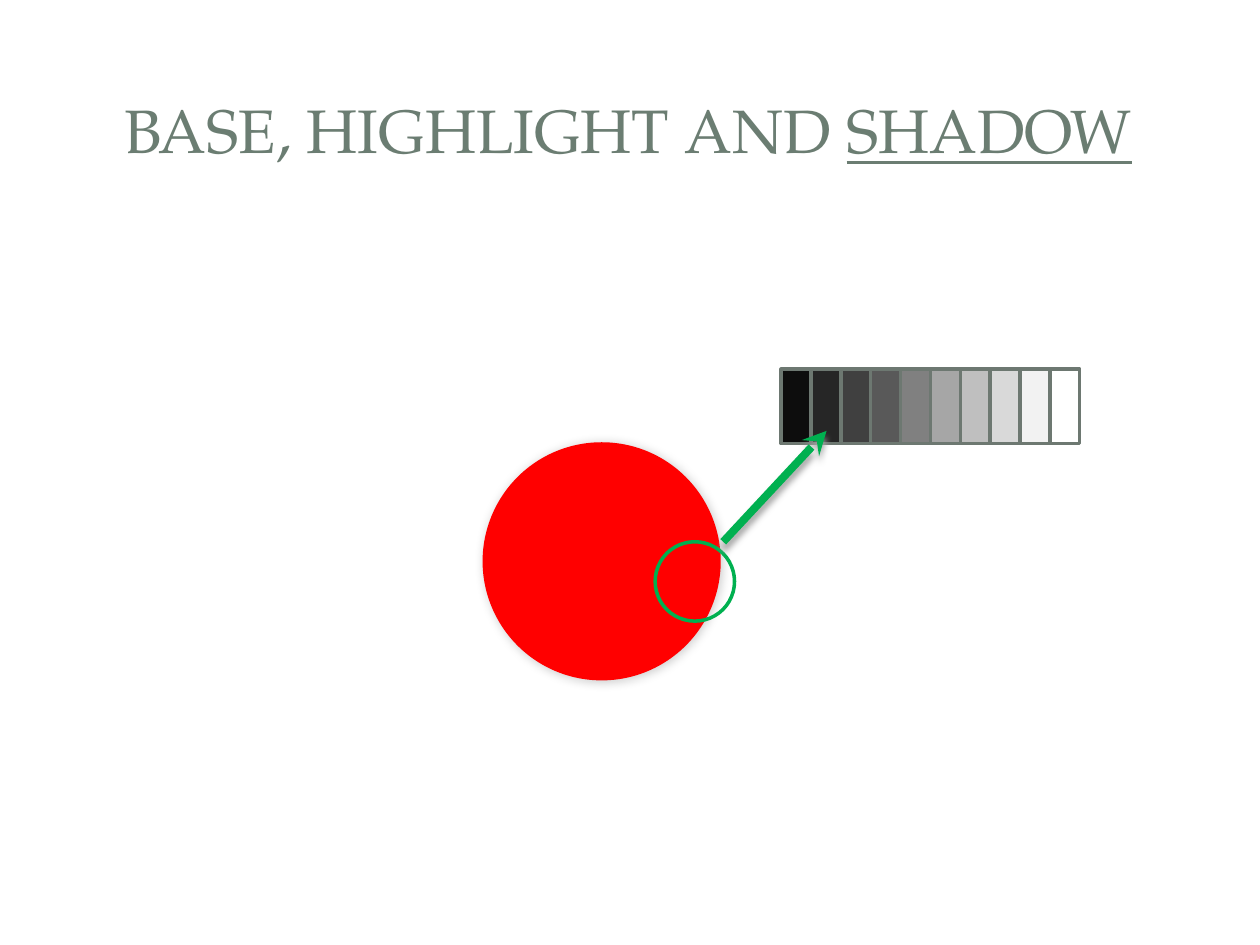
import pptx
import pptx.util
import pptx.dml.color
import pptx.enum.shapes
import pptx.enum.text
import pptx.oxml
import pptx.oxml.ns
from pptx.util import Inches

COLORS = {"title": "6B7D72", "ball": "FF0000", "marker": "00B050",
          "swatch_line": "6D7871", "soft_shadow": "000000", "arrow_shadow": "A6A6A6"}
FONT = "TeX Gyre Pagella"
TITLE = [("BASE, HIGHLIGHT AND ", False), ("SHADOW", True)]
GRAYS = ["0D0D0D", "262626", "404040", "595959", "808080",
         "A6A6A6", "BFBFBF", "D9D9D9", "F2F2F2", "FFFFFF"]
SCALE_LEFT, SCALE_TOP, SCALE_WIDTH, SCALE_HEIGHT = 6.2, 2.93, 2.37, 0.59
SHAPES = pptx.enum.shapes.MSO_SHAPE


def rgb(value):
    return pptx.dml.color.RGBColor.from_string(value)


def add_text(para, text, size, color, underline=False):
    span = para.add_run()
    span.text = text
    span.font.name = FONT
    span.font.size = pptx.util.Pt(size)
    span.font.color.rgb = rgb(color)
    span.font.underline = underline


def add_figure(slide, kind, box, fill=None, line=None):
    shape = slide.shapes.add_shape(kind, *[Inches(value) for value in box])
    shape.shadow.inherit = False
    if fill:
        shape.fill.solid()
        shape.fill.fore_color.rgb = rgb(fill)
    else:
        shape.fill.background()
    if line:
        shape.line.color.rgb = rgb(line)
        shape.line.width = pptx.util.Pt(2)
    else:
        shape.line.fill.background()
    return shape


def set_shadow(shape, color, opacity, blur, distance, angle):
    properties = shape.element.spPr
    for old in properties.findall(pptx.oxml.ns.qn("a:effectLst")):
        properties.remove(old)
    properties.append(pptx.oxml.parse_xml(
        f'<a:effectLst {pptx.oxml.ns.nsdecls("a")}>'
        f'<a:outerShdw blurRad="{pptx.util.Pt(blur)}" dist="{pptx.util.Pt(distance)}" '
        f'dir="{angle * 60000}" rotWithShape="0"><a:srgbClr val="{color}">'
        f'<a:alpha val="{opacity * 1000}"/></a:srgbClr></a:outerShdw></a:effectLst>'))


def main():
    deck = pptx.Presentation()
    deck.slide_width, deck.slide_height = Inches(10), Inches(7.5)
    slide = deck.slides.add_slide(deck.slide_layouts[5])

    # Title
    title = slide.shapes.title
    title.left, title.top = Inches(0.47), Inches(0.45)
    title.width, title.height = Inches(9.03), Inches(1.14)
    title.text_frame.vertical_anchor = pptx.enum.text.MSO_ANCHOR.MIDDLE
    para = title.text_frame.paragraphs[0]
    para.alignment = pptx.enum.text.PP_ALIGN.CENTER
    for text, underline in TITLE:
        add_text(para, text, 35, COLORS["title"], underline=underline)

    # Ball
    ball = add_figure(slide, SHAPES.OVAL, (3.83, 3.51, 1.89, 1.89), fill=COLORS["ball"])
    set_shadow(ball, COLORS["soft_shadow"], 20, 6, 1, 45)

    # Gray scale, from dark to light
    step = SCALE_WIDTH / len(GRAYS)
    swatches = [add_figure(slide, SHAPES.RECTANGLE,
                           (SCALE_LEFT + index * step, SCALE_TOP, step, SCALE_HEIGHT),
                           fill=gray, line=COLORS["swatch_line"])
                for index, gray in enumerate(GRAYS)]
    slide.shapes.add_group_shape(swatches)

    # Ring on the shadow side and the arrow to its gray
    add_figure(slide, SHAPES.OVAL, (5.2, 4.3, 0.63, 0.63), line=COLORS["marker"])
    arrow = slide.shapes.add_connector(
        pptx.enum.shapes.MSO_CONNECTOR.STRAIGHT,
        Inches(5.74), Inches(4.3), Inches(6.56), Inches(3.42))
    arrow.line.color.rgb = rgb(COLORS["marker"])
    arrow.line.width = pptx.util.Pt(4.5)
    arrow.line._get_or_add_ln().append(pptx.oxml.parse_xml(
        f'<a:tailEnd {pptx.oxml.ns.nsdecls("a")} type="stealth"/>'))
    set_shadow(arrow, COLORS["arrow_shadow"], 100, 4, 4, 90)

    deck.save("out.pptx")


if __name__ == "__main__":
    main()
